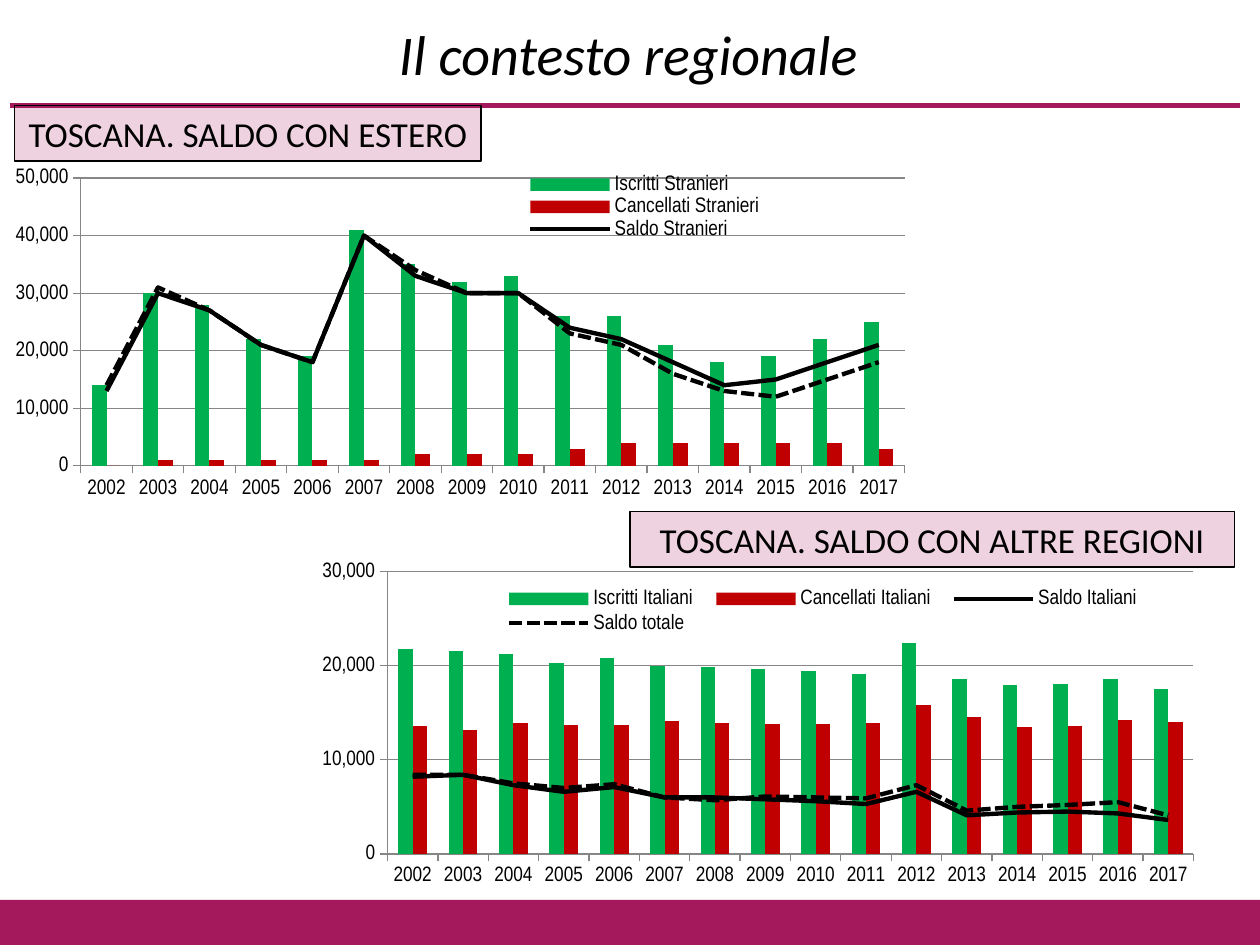
from pptx import Presentation
from pptx.chart.data import CategoryChartData
from pptx.dml.color import RGBColor
from pptx.enum.chart import XL_CHART_TYPE, XL_LEGEND_POSITION, XL_MARKER_STYLE, XL_TICK_MARK
from pptx.enum.dml import MSO_LINE
from pptx.enum.shapes import MSO_CONNECTOR, MSO_SHAPE
from pptx.enum.text import MSO_ANCHOR, PP_ALIGN
from pptx.oxml import parse_xml
from pptx.oxml.ns import nsdecls, qn
from pptx.util import Cm, Pt

COLUMNS = XL_CHART_TYPE.COLUMN_CLUSTERED
LEGEND_RIGHT = XL_LEGEND_POSITION.RIGHT
NO_MARKER = XL_MARKER_STYLE.NONE
TICK_OUTSIDE = XL_TICK_MARK.OUTSIDE
SHORT_DASH = MSO_LINE.SQUARE_DOT
STRAIGHT = MSO_CONNECTOR.STRAIGHT
RECTANGLE = MSO_SHAPE.RECTANGLE
MIDDLE = MSO_ANCHOR.MIDDLE
CENTER = PP_ALIGN.CENTER

THEME = {
    "text_font": "Calibri", "chart_font": "Arial Narrow",
    "title_size": 32, "label_size": 20, "chart_size": 12,
    "ink": "000000", "band": "A3195B", "label": "B11F61", "grid": "868686",
    "arrivals": "00B050", "departures": "C00000",
    "rule_width": 2.5, "thin_width": 0.75, "balance_width": 2.5,
}

TITLE = "Il contesto regionale"
YEARS = [str(year) for year in range(2002, 2018)]
PANELS = [
    {
        "label": "TOSCANA. SALDO CON ESTERO",
        "label_box": (0.3, 2.13, 9.4, 1.12),
        "chart_box": (0, 3.12, 18.31, 7.01),
        "plot": (0.089, 0.067, 0.907, 0.828),
        "legend": (0.56, 0.05, 0.3, 0.2),
        "hidden_entries": [3],
        "maximum": 50000,
        "series": {
            "Iscritti Stranieri": [14000, 30000, 28000, 22000, 19000, 41000, 35000, 32000,
                                   33000, 26000, 26000, 21000, 18000, 19000, 22000, 25000],
            "Cancellati Stranieri": [0, 1000, 1000, 1000, 1000, 1000, 2000, 2000,
                                     2000, 3000, 4000, 4000, 4000, 4000, 4000, 3000],
            "Saldo Stranieri": [13000, 30000, 27000, 21000, 18000, 40000, 33000, 30000,
                                30000, 24000, 22000, 18000, 14000, 15000, 18000, 21000],
            "Saldo totale": [14000, 31000, 27000, 21000, 18000, 40000, 34000, 30000,
                             30000, 23000, 21000, 16000, 13000, 12000, 15000, 18000],
        },
    },
    {
        "label": "TOSCANA. SALDO CON ALTRE REGIONI",
        "label_box": (12.7, 10.31, 12.19, 1.12),
        "chart_box": (6.5, 10.72, 18.01, 7.14),
        "plot": (0.072, 0.113, 0.903, 0.801),
        "legend": (0.19, 0.15, 0.74, 0.15),
        "hidden_entries": [],
        "maximum": 30000,
        "series": {
            "Iscritti Italiani": [21800, 21600, 21200, 20300, 20800, 20000, 19900, 19600,
                                  19400, 19100, 22400, 18600, 17900, 18100, 18600, 17500],
            "Cancellati Italiani": [13600, 13200, 13900, 13700, 13700, 14100, 13900, 13800,
                                    13800, 13900, 15800, 14500, 13500, 13600, 14200, 14000],
            "Saldo Italiani": [8200, 8400, 7300, 6600, 7100, 6000, 6000, 5800,
                               5600, 5300, 6600, 4100, 4400, 4500, 4300, 3600],
            "Saldo totale": [8400, 8400, 7500, 7000, 7400, 6000, 5700, 6100,
                             6000, 5900, 7300, 4600, 5000, 5200, 5500, 4100],
        },
    },
]


def color(name):
    return RGBColor.from_string(THEME[name])


def cm_box(box):
    return [Cm(length) for length in box]


def write(frame, text, size, italic=False, spacing=None):
    frame.vertical_anchor = MIDDLE
    paragraph = frame.paragraphs[0]
    paragraph.alignment = CENTER
    paragraph.line_spacing = spacing
    run = paragraph.add_run()
    run.text = text
    run.font.name, run.font.size = THEME["text_font"], Pt(THEME[size])
    run.font.italic = italic
    run.font.color.rgb = color("ink")


def add_rectangle(slide, box, fill, opacity=None):
    rectangle = slide.shapes.add_shape(RECTANGLE, *cm_box(box))
    rectangle.shadow.inherit = False
    rectangle.fill.solid()
    rectangle.fill.fore_color.rgb = color(fill)
    rectangle.line.fill.background()
    if opacity:
        tint = rectangle._element.spPr.find(qn("a:solidFill")).find(qn("a:srgbClr"))
        tint.append(parse_xml(f'<a:alpha {nsdecls("a")} val="{opacity * 1000}"/>'))
    return rectangle


def add_label(slide, text, box):
    label = add_rectangle(slide, box, "label", opacity=20)
    label.line.color.rgb = color("ink")
    label.line.width = Pt(THEME["thin_width"])
    label.text_frame.word_wrap = False
    write(label.text_frame, text, "label_size")


def add_rule(slide, left, right, top):
    rule = slide.shapes.add_connector(STRAIGHT, Cm(left), Cm(top), Cm(right), Cm(top))
    rule.line.color.rgb = color("band")
    rule.line.width = Pt(THEME["rule_width"])
    rule._element.spPr.append(parse_xml(f'<a:effectLst {nsdecls("a")}/>'))


def place(parent, position, box, inner=""):
    for old in parent.findall(qn("c:layout")):
        parent.remove(old)
    sizes = "".join(f'<c:{key} val="{value}"/>' for key, value in zip("xywh", box))
    parent.insert(position, parse_xml(
        f'<c:layout {nsdecls("c")}><c:manualLayout>{inner}<c:xMode val="edge"/>'
        f'<c:yMode val="edge"/>{sizes}</c:manualLayout></c:layout>'))


def move_balances_to_lines(plot_area):
    bars = plot_area.find(qn("c:barChart"))
    lines = parse_xml(f'<c:lineChart {nsdecls("c")}><c:grouping val="standard"/>'
                      '<c:varyColors val="0"/><c:marker val="1"/></c:lineChart>')
    for balance in bars.findall(qn("c:ser"))[2:]:
        for flag in balance.findall(qn("c:invertIfNegative")):
            balance.remove(flag)
        lines.insert(len(lines) - 1, balance)
    for axis in bars.findall(qn("c:axId")):
        lines.append(parse_xml(f'<c:axId {nsdecls("c")} val="{axis.get("val")}"/>'))
    bars.addnext(lines)


def format_axes(chart, maximum):
    values = chart.value_axis
    values.minimum_scale, values.maximum_scale, values.major_unit = 0, maximum, 10000
    values.tick_labels.number_format = "#,##0"
    values.tick_labels.number_format_is_linked = False
    values.has_major_gridlines = True
    for part in (values, chart.category_axis, values.major_gridlines):
        part.format.line.color.rgb = color("grid")
        part.format.line.width = Pt(THEME["thin_width"])
    for axis in (values, chart.category_axis):
        axis.major_tick_mark = TICK_OUTSIDE


def format_series(chart):
    columns, balances = chart.plots
    columns.gap_width, columns.overlap = 150, 0
    columns.vary_by_categories = False
    for column, fill in zip(columns.series, ("arrivals", "departures")):
        column.format.fill.solid()
        column.format.fill.fore_color.rgb = color(fill)
    for balance, dash in zip(balances.series, (None, SHORT_DASH)):
        balance.smooth = False
        balance.marker.style = NO_MARKER
        balance.format.line.color.rgb = color("ink")
        balance.format.line.width = Pt(THEME["balance_width"])
        balance.format.line.dash_style = dash


def add_panel(slide, panel):
    data = CategoryChartData(number_format="#,##0")
    data.categories = YEARS
    for name, values in panel["series"].items():
        data.add_series(name, values)
    chart = slide.shapes.add_chart(COLUMNS, *cm_box(panel["chart_box"]), data).chart
    chart.has_title = False
    chart.font.name, chart.font.size = THEME["chart_font"], Pt(THEME["chart_size"])
    chart.font.color.rgb = color("ink")
    plot_area = chart._chartSpace.chart.plotArea
    move_balances_to_lines(plot_area)
    place(plot_area, 0, panel["plot"], '<c:layoutTarget val="inner"/>')
    format_axes(chart, panel["maximum"])
    format_series(chart)
    chart.has_legend = True
    chart.legend.position = LEGEND_RIGHT
    chart.legend.include_in_layout = False
    place(chart.legend._element, 1, panel["legend"])
    for entry in panel["hidden_entries"]:
        chart.legend._element.insert(1, parse_xml(
            f'<c:legendEntry {nsdecls("c")}><c:idx val="{entry}"/>'
            '<c:delete val="1"/></c:legendEntry>'))
    add_label(slide, panel["label"], panel["label_box"])


def main():
    """Build the slide on migration balances in Tuscany."""
    deck = Presentation()
    deck.slide_width, deck.slide_height = Cm(25.4), Cm(19.05)
    slide = deck.slides.add_slide(deck.slide_layouts[5])
    title = slide.shapes.title
    title.left, title.top, title.width, title.height = cm_box((1.24, -0.08, 22.86, 2.51))
    write(title.text_frame, TITLE, "title_size", italic=True, spacing=0.85)
    add_rule(slide, 0.2, 24.99, 2.13)
    add_rectangle(slide, (0, 18.14, 25.4, 0.91), "band")
    for panel in PANELS:
        add_panel(slide, panel)
    deck.save("out.pptx")


if __name__ == "__main__":
    main()
